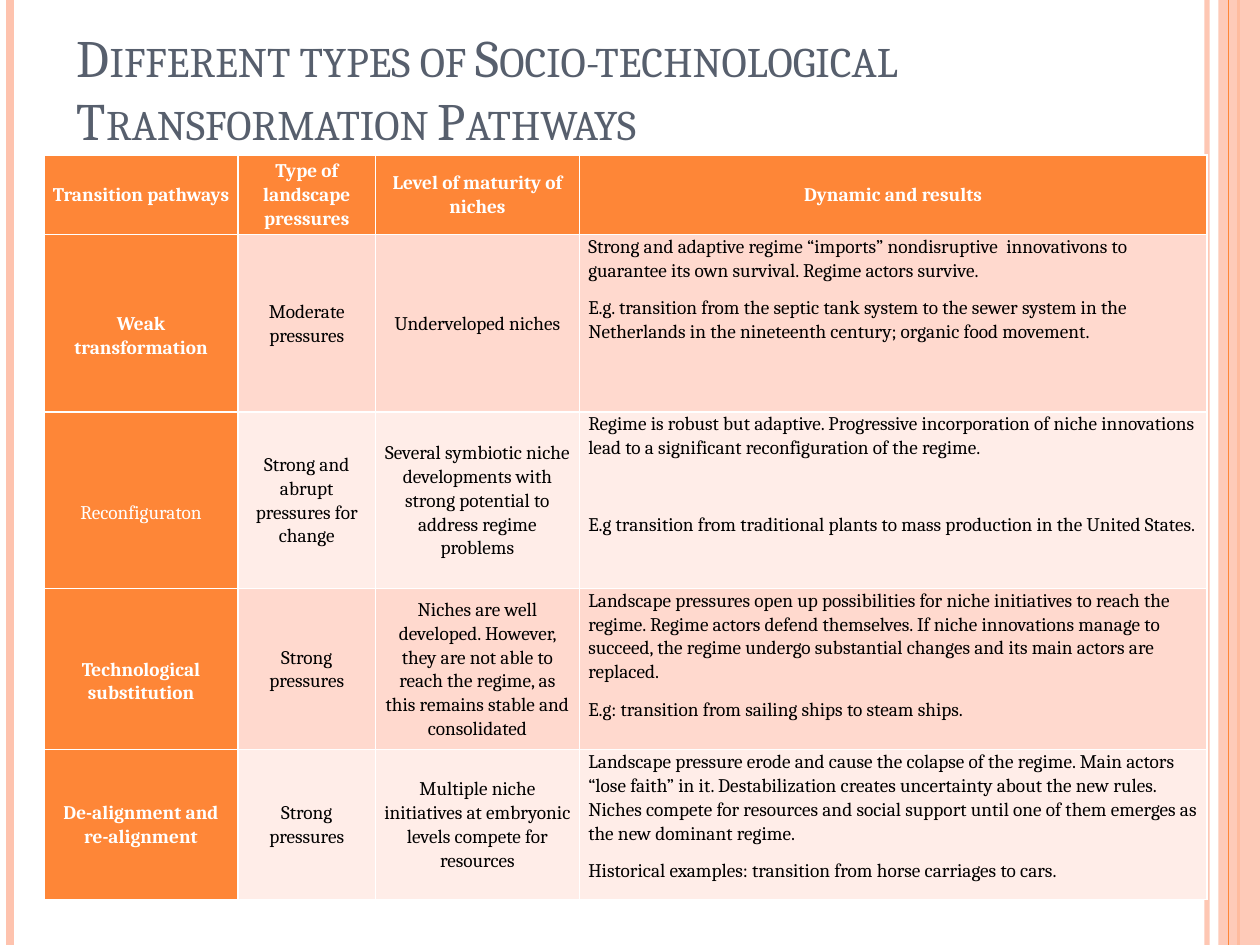
import lxml.etree
import pptx
import pptx.dml.color
import pptx.enum.shapes
import pptx.enum.text
import pptx.oxml.ns
import pptx.util
from pptx.util import Inches

FONT = "Cambria"
ORANGE, PEACH, WHITE, BLACK, SLATE = "FE8637", "FEC3AE", "FFFFFF", "000000", "575F6D"
BANDS = ("FFD9CE", "FFEDE8")
ALIGN = pptx.enum.text.PP_ALIGN
ANCHOR = pptx.enum.text.MSO_ANCHOR

LINE_HEIGHT = 0.19
COL_WIDTHS = (1.54, 1.09, 1.62, 4.98)
ROW_HEIGHTS = (0.63, 1.41, 1.4, 1.28, 1.19)

# x, colour, width in points, opacity in percent
STRIPES = (
    (9.58, PEACH, 3, 93),
    (0.08, PEACH, 4.5, 100),
    (9.83, ORANGE, 1.5, 100),
)

HEADERS = ("Transition pathways", "Type of landscape pressures",
           "Level of maturity of niches", "Dynamic and results")

PATHWAYS = (
    ("Weak transformation", "Moderate pressures", "Underveloped niches",
     ("Strong and adaptive regime “imports” nondisruptive  innovativons to guarantee "
      "its own survival. Regime actors survive.",
      "E.g. transition from the septic tank system to the sewer system in the "
      "Netherlands in the nineteenth century; organic food movement.")),
    ("Reconfiguraton", "Strong and abrupt pressures for change",
     "Several symbiotic niche developments with strong potential to address regime problems",
     ("Regime is robust but adaptive. Progressive incorporation of niche innovations "
      "lead to a significant reconfiguration of the regime.",
      "E.g transition from traditional plants to mass production in the United States.")),
    ("Technological substitution", "Strong pressures",
     "Niches are well developed. However, they are not able to reach the regime, "
     "as this remains stable and consolidated",
     ("Landscape pressures open up possibilities for niche initiatives to reach the "
      "regime. Regime actors defend themselves. If niche innovations manage to succeed, "
      "the regime undergo substantial changes and its main actors are replaced.",
      "E.g: transition from sailing ships to steam ships.")),
    ("De-alignment and re-alignment", "Strong pressures",
     "Multiple niche initiatives at embryonic levels compete for resources",
     ("Landscape pressure erode and cause the colapse of the regime. Main actors “lose "
      "faith” in it. Destabilization creates uncertainty about the new rules. Niches "
      "compete for resources and social support until one of them emerges as the new "
      "dominant regime.",
      "Historical examples: transition from horse carriages to cars.")),
)


def rgb(color):
    return pptx.dml.color.RGBColor.from_string(color)


def apply(obj, values):
    for name, value in values.items():
        setattr(obj, name, value)


def set_font(r, size, color, bold=False):
    apply(r.font, {"name": FONT, "size": pptx.util.Pt(size), "bold": bold})
    r.font.color.rgb = rgb(color)


def set_opacity(sp, percent):
    """Set the opacity of the first solid colour of a shape or line."""
    clr = sp._element.spPr.find(".//" + pptx.oxml.ns.qn("a:srgbClr"))
    alpha = lxml.etree.SubElement(clr, pptx.oxml.ns.qn("a:alpha"))
    alpha.set("val", str(percent * 1000))


def add_stripe(slide, x, color, width, opacity=100):
    line = slide.shapes.add_connector(pptx.enum.shapes.MSO_CONNECTOR.STRAIGHT,
                                      Inches(x), 0, Inches(x), Inches(7.5))
    line.line.color.rgb = rgb(color)
    line.line.width = pptx.util.Pt(width)
    lxml.etree.SubElement(line._element.spPr, pptx.oxml.ns.qn("a:effectLst"))
    if opacity < 100:
        set_opacity(line, opacity)


def add_side_band(slide):
    sp = slide.shapes.add_shape(pptx.enum.shapes.MSO_SHAPE.RECTANGLE,
                                Inches(9.67), 0, Inches(0.33), Inches(7.5))
    sp.shadow.inherit = False
    sp.fill.solid()
    sp.fill.fore_color.rgb = rgb(PEACH)
    sp.line.fill.background()
    set_opacity(sp, 87)


def set_title(slide, text):
    title = slide.shapes.title
    apply(title, {"left": Inches(0.51), "top": Inches(0),
                  "width": Inches(9), "height": Inches(1.25)})
    tf = title.text_frame
    apply(tf, {"vertical_anchor": ANCHOR.BOTTOM, "word_wrap": True,
               "auto_size": pptx.enum.text.MSO_AUTO_SIZE.NONE})
    p = tf.paragraphs[0]
    p.alignment = ALIGN.LEFT
    r = p.add_run()
    r.text = text
    set_font(r, 30, SLATE)
    r.font._element.set("cap", "small")


def fill_cell(cell, paragraphs, fill, color=BLACK, bold=False,
              align=ALIGN.CENTER, anchor=ANCHOR.MIDDLE, top=0, gap=0):
    """Write a cell; top is its upper margin, gap the extra points between paragraphs."""
    apply(cell, {"margin_left": Inches(0.07), "margin_right": Inches(0.07),
                 "margin_top": Inches(top), "margin_bottom": 0,
                 "vertical_anchor": anchor})
    cell.fill.solid()
    cell.fill.fore_color.rgb = rgb(fill)
    tf = cell.text_frame
    for i, text in enumerate(paragraphs):
        p = tf.add_paragraph() if i else tf.paragraphs[0]
        apply(p, {"alignment": align, "line_spacing": 1.07,
                  "space_after": pptx.util.Pt(8),
                  "space_before": pptx.util.Pt(gap if i else 0)})
        r = p.add_run()
        r.text = text
        set_font(r, 11, color, bold)


def add_pathway_table(slide):
    table = slide.shapes.add_table(
        len(ROW_HEIGHTS), len(COL_WIDTHS), Inches(0.35), Inches(1.23),
        Inches(sum(COL_WIDTHS)), Inches(sum(ROW_HEIGHTS))).table
    for col, width in zip(table.columns, COL_WIDTHS):
        col.width = Inches(width)
    for row, height in zip(table.rows, ROW_HEIGHTS):
        row.height = Inches(height)

    for c, text in enumerate(HEADERS):
        fill_cell(table.cell(0, c), [text], ORANGE, WHITE, True)
    for n, (name, pressure, maturity, results) in enumerate(PATHWAYS):
        band = BANDS[n % 2]
        cells = table.rows[n + 1].cells
        reconfiguration = n == 1
        fill_cell(cells[0], [name], ORANGE, WHITE, bold=not reconfiguration,
                  top=LINE_HEIGHT if n < 3 else 0)
        fill_cell(cells[1], [pressure], band)
        fill_cell(cells[2], [maturity], band)
        fill_cell(cells[3], results, band, align=ALIGN.LEFT, anchor=ANCHOR.TOP,
                  gap=22 if reconfiguration else 0)


def main():
    prs = pptx.Presentation()
    apply(prs, {"slide_width": Inches(10), "slide_height": Inches(7.5)})
    slide = prs.slides.add_slide(prs.slide_layouts[5])
    for stripe in STRIPES:
        add_stripe(slide, *stripe)
    add_side_band(slide)
    add_stripe(slide, 9.75, ORANGE, 0.75)
    set_title(slide, "Different types of Socio-technological Transformation Pathways")
    add_pathway_table(slide)
    prs.save("out.pptx")


if __name__ == "__main__":
    main()
